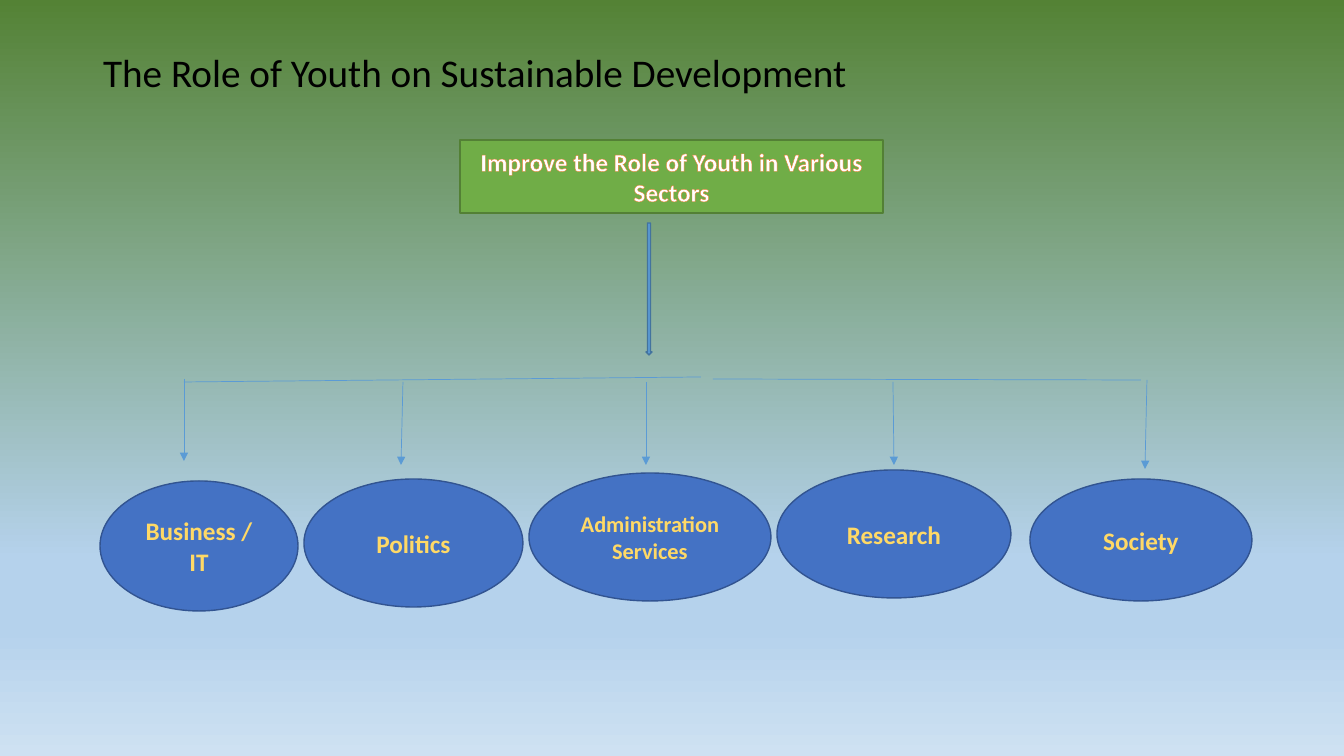
from lxml.etree import SubElement
from pptx import Presentation
from pptx.dml.color import RGBColor
from pptx.enum.shapes import MSO_CONNECTOR as Connector, MSO_SHAPE as Shape
from pptx.enum.text import MSO_ANCHOR as Anchor, PP_ALIGN as Align
from pptx.oxml import parse_xml
from pptx.oxml.ns import nsdecls, qn
from pptx.util import Emu, Pt

EMU_PER_PX = 914400 / 100.8

BLACK = RGBColor(0x00, 0x00, 0x00)
WHITE = RGBColor(0xFF, 0xFF, 0xFF)
GREEN = RGBColor(0x70, 0xAD, 0x47)
DARK_GREEN = RGBColor(0x53, 0x80, 0x35)
FOREST = RGBColor(0x54, 0x82, 0x35)
SKY = RGBColor(0xB5, 0xD2, 0xEC)
PALE_SKY = RGBColor(0xCE, 0xE1, 0xF2)
LIGHT_BLUE = RGBColor(0x5B, 0x9B, 0xD5)
STEEL_BLUE = RGBColor(0x43, 0x73, 0x9E)
BLUE = RGBColor(0x44, 0x72, 0xC4)
DARK_BLUE = RGBColor(0x32, 0x54, 0x91)
ORANGE = RGBColor(0xED, 0x7D, 0x31)
GOLD = RGBColor(0xFF, 0xC0, 0x00)
LIGHT_GOLD = RGBColor(0xFF, 0xD9, 0x66)
CREAM = RGBColor(0xFF, 0xF2, 0xCC)

BACKGROUND_STOPS = [(0, FOREST), (74, SKY), (83, SKY), (100, PALE_SKY)]
GOLD_STOPS = [(0, GOLD), (4, LIGHT_GOLD), (87, CREAM)]


def px(length):
    return Emu(round(length * EMU_PER_PX))


def use_gradient(parent, stops):
    """Replace the solid fill of parent by a top-to-bottom gradient."""
    stop_xml = "".join(
        f'<a:gs pos="{percent * 1000}"><a:srgbClr val="{color}"/></a:gs>'
        for percent, color in stops)
    gradient = parse_xml(
        f'<a:gradFill {nsdecls("a")} rotWithShape="1"><a:gsLst>{stop_xml}</a:gsLst>'
        '<a:lin ang="5400000" scaled="0"/></a:gradFill>')
    parent.replace(parent.find(qn("a:solidFill")), gradient)


class SlideBuilder:
    font_name = "Calibri"

    def __init__(self, presentation):
        self.slide = presentation.slides.add_slide(presentation.slide_layouts[1])
        title = self.slide.shapes.title
        title._element.getparent().remove(title._element)

    def background(self, stops):
        self.slide.background.fill.solid()
        use_gradient(self.slide._element.find(".//" + qn("p:bgPr")), stops)

    def style(self, paragraph, size, color, bold=False):
        font = paragraph.font
        font.name, font.size, font.bold = self.font_name, Pt(size), bold
        font.color.rgb = color

    def heading(self, text, left, top, width, height):
        body = self.slide.placeholders[1]
        body.left, body.top = px(left), px(top)
        body.width, body.height = px(width), px(height)
        body.text_frame.vertical_anchor = Anchor.TOP
        paragraph = body.text_frame.paragraphs[0]
        paragraph.text = text
        paragraph.line_spacing = 0.9
        paragraph.space_before = Pt(10)
        self.style(paragraph, 28, BLACK)
        properties = paragraph._p.get_or_add_pPr()
        properties.set("marL", "0")
        properties.set("indent", "0")
        properties.find(qn("a:defRPr")).addprevious(
            parse_xml(f'<a:buNone {nsdecls("a")}/>'))

    def shape(self, kind, box, fill, line):
        shape = self.slide.shapes.add_shape(kind, *map(px, box))
        shape.shadow.inherit = False
        shape.fill.solid()
        shape.fill.fore_color.rgb = fill
        shape.line.color.rgb = line
        shape.line.width = Pt(1)
        return shape

    def label(self, shape, text, size, color, outline, outline_width, stops=None):
        frame = shape.text_frame
        frame.word_wrap = True
        frame.vertical_anchor = Anchor.MIDDLE
        paragraph = frame.paragraphs[0]
        paragraph.text = text
        paragraph.alignment = Align.CENTER
        self.style(paragraph, size, color, bold=True)
        properties = paragraph._p.pPr.find(qn("a:defRPr"))
        if stops:
            use_gradient(properties, stops)
        properties.insert(0, parse_xml(
            f'<a:ln {nsdecls("a")} w="{Pt(outline_width)}"><a:solidFill>'
            f'<a:srgbClr val="{outline}"/></a:solidFill></a:ln>'))

    def line(self, start, end, arrow=False):
        connector = self.slide.shapes.add_connector(
            Connector.STRAIGHT, *map(px, start + end))
        connector.line.color.rgb = LIGHT_BLUE
        connector.line.width = Pt(0.5)
        properties = connector._element.spPr
        if arrow:
            SubElement(properties.find(qn("a:ln")), qn("a:tailEnd"), type="triangle")
        SubElement(properties, qn("a:effectLst"))


def main():
    presentation = Presentation()
    presentation.slide_width, presentation.slide_height = px(1344), px(756)
    builder = SlideBuilder(presentation)
    builder.background(BACKGROUND_STOPS)
    builder.heading("The Role of Youth on Sustainable Development", 93, 49, 1159, 632)

    # Goal and the arrow down to the sectors
    goal = builder.shape(Shape.RECTANGLE, (460, 140, 423, 73), GREEN, DARK_GREEN)
    builder.label(goal, "Improve the Role of Youth in Various Sectors",
                  18, WHITE, ORANGE, 0.52)
    builder.shape(Shape.DOWN_ARROW, (646, 223, 6, 132), LIGHT_BLUE, STEEL_BLUE)

    # Branch line in two halves
    builder.line((701, 377), (184, 382))
    builder.line((713, 379), (1141, 380))

    # Sectors: text, size, ellipse box, arrow start, arrow end
    sectors = [
        ("Business / IT", 18, (100, 481, 198, 130), (184, 379), (184, 461)),
        ("Politics", 18, (304, 479, 219, 128), (403, 382), (401, 465)),
        ("Administration Services", 16, (529, 473, 242, 128), (646, 382), (646, 465)),
        ("Research", 18, (777, 470, 234, 128), (893, 382), (894, 465)),
        ("Society", 18, (1030, 479, 222, 122), (1147, 380), (1145, 469)),
    ]
    for text, size, box, start, end in sectors:
        builder.line(start, end, arrow=True)
        ellipse = builder.shape(Shape.OVAL, box, BLUE, DARK_BLUE)
        builder.label(ellipse, text, size, LIGHT_GOLD, GOLD, 1, GOLD_STOPS)

    presentation.save("out.pptx")


if __name__ == "__main__":
    main()
